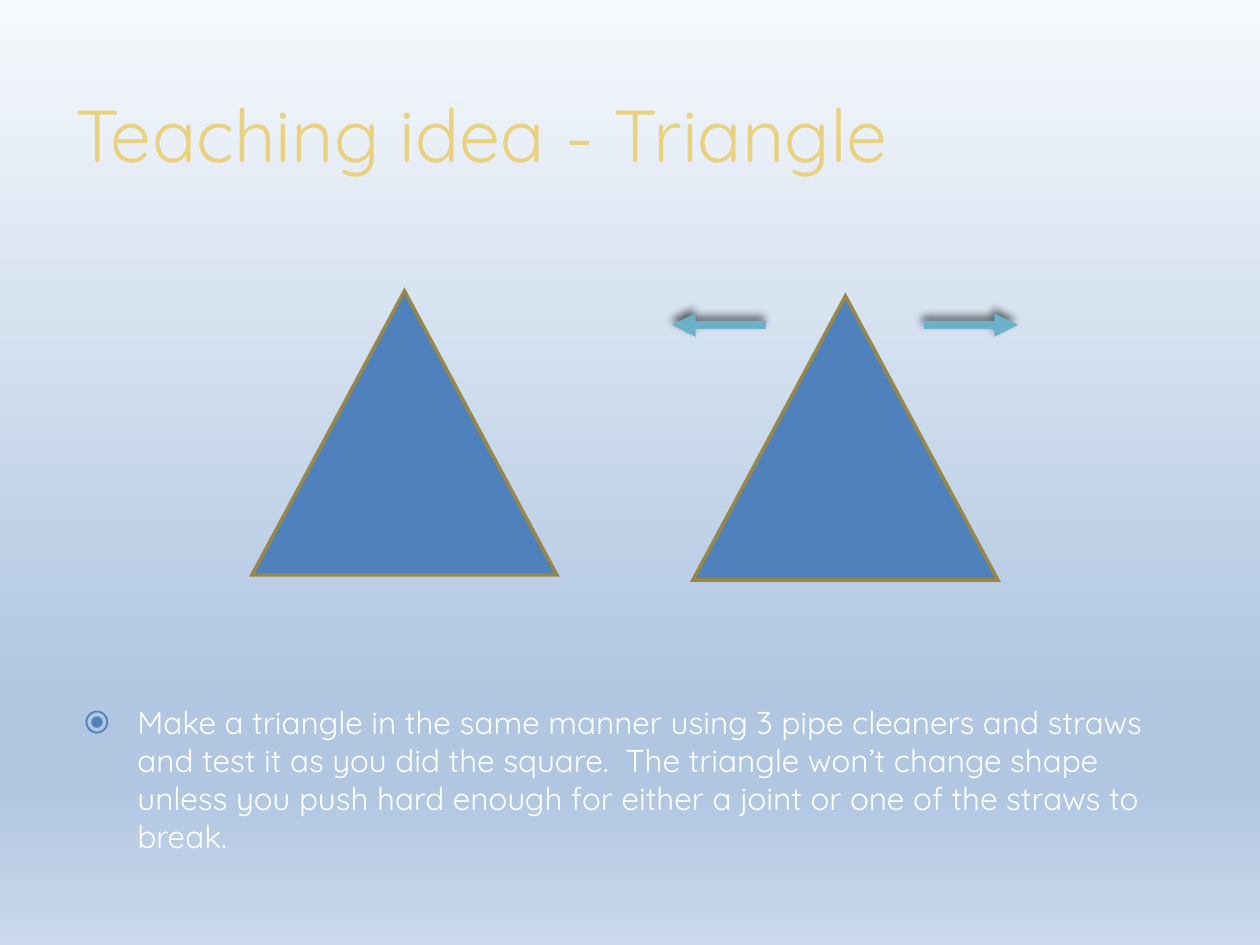
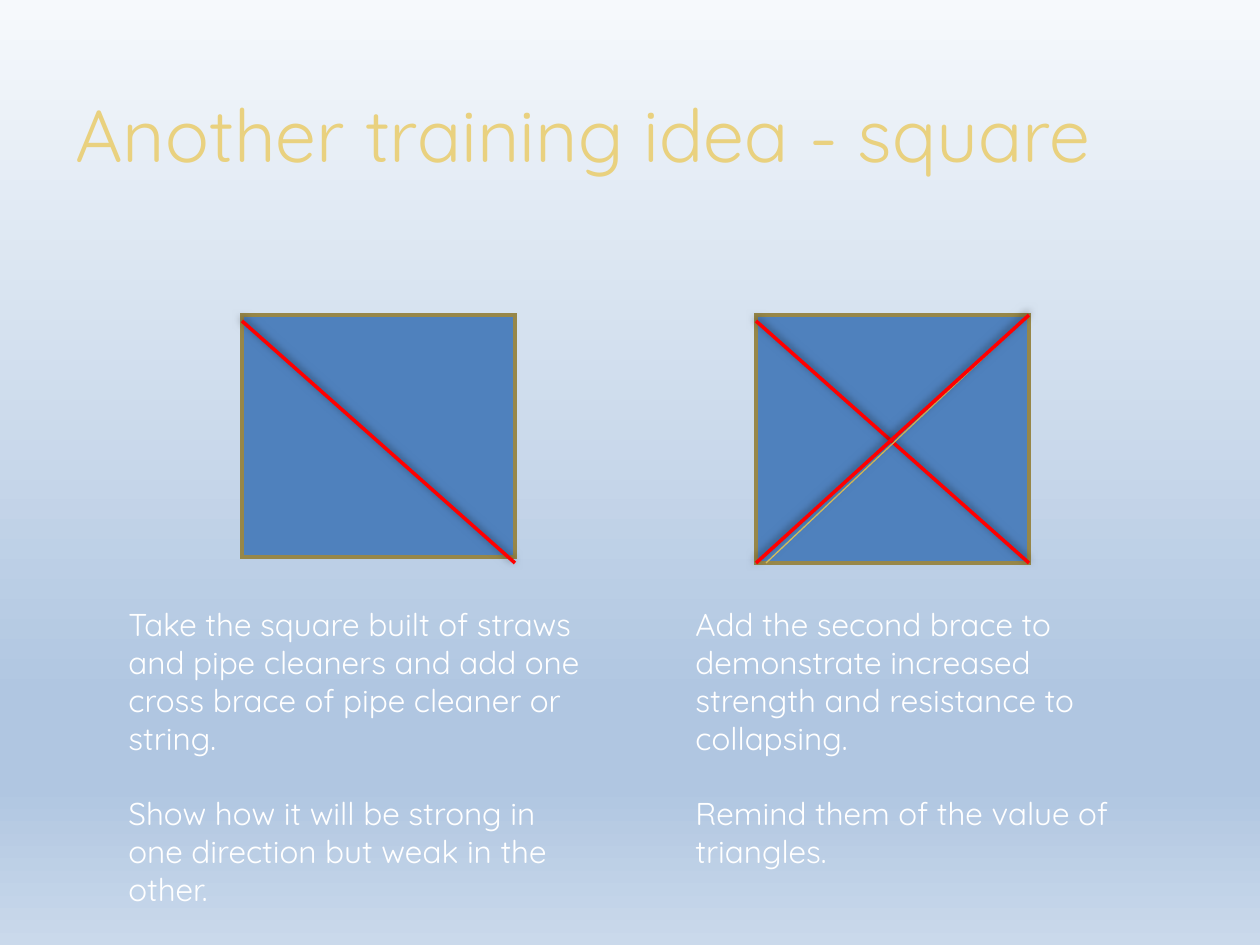
"""Build two slides on teaching the strength of triangles and braced squares."""
from dataclasses import dataclass
from typing import Optional

import pptx
import pptx.dml.color
import pptx.enum.shapes
import pptx.enum.text
import pptx.oxml.ns
import pptx.presentation
import pptx.slide
import pptx.text.text
import pptx.util
from lxml import etree

EMU_PER_PX = 914400 / 126
FONT = "Quicksand"
GOLD, WHITE, BLUE, OLIVE = "E9D17F", "FFFFFF", "4F81BD", "978749"
TEAL, RED, PALE_GOLD = "6BB1C9", "FF0000", "D8BF5C"
BACKGROUND_STOPS = ((0, "F6F9FC"), (74, "B0C6E1"), (83, "B0C6E1"), (100, "CAD9EB"))
BODY_SIZE = 18
BLANK_LINE = 21.5
TRIANGLE = pptx.enum.shapes.MSO_SHAPE.ISOSCELES_TRIANGLE
RECTANGLE = pptx.enum.shapes.MSO_SHAPE.RECTANGLE


@dataclass(frozen=True)
class Box:
    left: int
    top: int
    width: int
    height: int


@dataclass(frozen=True)
class Shadow:
    opacity: int
    blur: int
    distance: int


@dataclass(frozen=True)
class Stroke:
    color: str
    width: float
    shadow: Optional[Shadow] = None
    arrow: bool = False


@dataclass(frozen=True)
class Line:
    start: tuple[int, int]
    end: tuple[int, int]
    stroke: Stroke


@dataclass(frozen=True)
class TextBlock:
    box: Box
    paragraphs: tuple[str, ...]
    size: int = BODY_SIZE
    color: str = WHITE
    bullet: bool = False
    middle: bool = False


ARROW = Stroke(TEAL, 4.5, Shadow(60, 5, 3), arrow=True)
BRACE = Stroke(RED, 2, Shadow(50, 5, 2))
THIN_BRACE = Stroke(PALE_GOLD, 0.75)
TITLE_BOX = Box(63, 37, 1134, 193)

TRIANGLES = (Box(252, 291, 305, 284), Box(693, 296, 305, 284))
PUSHES = (Line((766, 325), (672, 325), ARROW), Line((924, 325), (1018, 325), ARROW))
TRIANGLE_TEXT = TextBlock(
    Box(63, 697, 1134, 164),
    ("Make a triangle in the same manner using 3 pipe cleaners and straws and test it "
     "as you did the square.  The triangle won’t change shape unless you push hard "
     "enough for either a joint or one of the straws to break.",),
    bullet=True,
)

SQUARES = (Box(242, 315, 273, 242), Box(756, 315, 273, 248))
BRACES = (
    Line((242, 321), (515, 563), BRACE),
    Line((756, 321), (1029, 563), BRACE),
    Line((1029, 315), (766, 563), THIN_BRACE),
    Line((1029, 315), (756, 563), BRACE),
)
SQUARE_TEXTS = (
    TextBlock(
        Box(116, 599, 483, 340),
        ("Take the square built of straws and pipe cleaners and add one cross brace of "
         "pipe cleaner or string.",
         "Show how it will be strong in one direction but weak in the other."),
    ),
    TextBlock(
        Box(683, 599, 462, 280),
        ("Add the second brace to demonstrate increased strength and resistance to "
         "collapsing.",
         "Remind them of the value of triangles."),
    ),
)


def px(value: int) -> int:
    """Turn pixels into EMU."""
    return round(value * EMU_PER_PX)


def rgb(value: str) -> pptx.dml.color.RGBColor:
    """Turn a hex string into a colour."""
    return pptx.dml.color.RGBColor.from_string(value)


def add_xml(parent: etree._Element, tag: str, **attributes: object) -> etree._Element:
    """Append a DrawingML element with the given attributes."""
    texts = {name: str(value) for name, value in attributes.items()}
    return etree.SubElement(parent, pptx.oxml.ns.qn(f"a:{tag}"), texts)


def paint_background(slide: pptx.slide.Slide) -> None:
    """Fill the slide with the shared vertical gradient."""
    fill = slide.background.fill
    fill.gradient()
    fill.gradient_angle = 270
    stops = next(slide.element.iter(pptx.oxml.ns.qn("a:gsLst")))
    for stop in list(stops):
        stops.remove(stop)
    for position, color in BACKGROUND_STOPS:
        add_xml(add_xml(stops, "gs", pos=position * 1000), "srgbClr", val=color)


def add_bullet(paragraph: pptx.text.text._Paragraph) -> None:
    """Give the paragraph a hanging ring bullet."""
    properties = paragraph._p.get_or_add_pPr()
    properties.set("marL", str(px(62)))
    properties.set("indent", str(px(-53)))
    add_xml(add_xml(properties, "buClr"), "srgbClr", val=BLUE)
    add_xml(properties, "buFont", typeface=FONT)
    add_xml(properties, "buChar", char="⦿")


def add_text(slide: pptx.slide.Slide, block: TextBlock) -> None:
    """Draw a text box with a blank line's gap between paragraphs."""
    box = block.box
    shape = slide.shapes.add_textbox(px(box.left), px(box.top), px(box.width), px(box.height))
    frame = shape.text_frame
    frame.word_wrap = True
    if block.middle:
        frame.vertical_anchor = pptx.enum.text.MSO_ANCHOR.MIDDLE
    for index, text in enumerate(block.paragraphs):
        paragraph = frame.add_paragraph() if index else frame.paragraphs[0]
        paragraph.text = text
        if index:
            paragraph.space_before = pptx.util.Pt(BLANK_LINE)
        if block.bullet:
            add_bullet(paragraph)
        paragraph.font.name = FONT
        paragraph.font.size = pptx.util.Pt(block.size)
        paragraph.font.color.rgb = rgb(block.color)


def add_figure(slide: pptx.slide.Slide, kind: pptx.enum.shapes.MSO_SHAPE, box: Box) -> None:
    """Draw a blue figure with a sharp-cornered olive outline."""
    shape = slide.shapes.add_shape(
        kind, px(box.left), px(box.top), px(box.width), px(box.height))
    shape.shadow.inherit = False
    shape.fill.solid()
    shape.fill.fore_color.rgb = rgb(BLUE)
    shape.line.color.rgb = rgb(OLIVE)
    shape.line.width = pptx.util.Pt(2)
    add_xml(shape.line._get_or_add_ln(), "miter", lim=800000)


def add_line(slide: pptx.slide.Slide, line: Line) -> None:
    """Draw a straight line with its arrowhead and shadow."""
    stroke = line.stroke
    connector = slide.shapes.add_connector(
        pptx.enum.shapes.MSO_CONNECTOR.STRAIGHT,
        *(px(value) for value in line.start + line.end))
    connector.line.color.rgb = rgb(stroke.color)
    connector.line.width = pptx.util.Pt(stroke.width)
    if stroke.arrow:
        add_xml(connector.line._get_or_add_ln(), "tailEnd", type="triangle")
    effects = add_xml(connector._element.spPr, "effectLst")
    if stroke.shadow:
        shadow = add_xml(
            effects, "outerShdw",
            blurRad=pptx.util.Pt(stroke.shadow.blur),
            dist=pptx.util.Pt(stroke.shadow.distance),
            dir=245 * 60000, rotWithShape=0)
        color = add_xml(shadow, "srgbClr", val="000000")
        add_xml(color, "alpha", val=stroke.shadow.opacity * 1000)


def add_slide(presentation: pptx.presentation.Presentation, title: str) -> pptx.slide.Slide:
    """Add a blank slide with the shared background and title."""
    slide = presentation.slides.add_slide(presentation.slide_layouts[6])
    paint_background(slide)
    add_text(slide, TextBlock(TITLE_BOX, (title,), 42, GOLD, middle=True))
    return slide


def build_triangle_slide(presentation: pptx.presentation.Presentation) -> None:
    """Show that a triangle holds its shape when pushed."""
    slide = add_slide(presentation, "Teaching idea - Triangle")
    add_text(slide, TRIANGLE_TEXT)
    for triangle in TRIANGLES:
        add_figure(slide, TRIANGLE, triangle)
    for push in PUSHES:
        add_line(slide, push)


def build_square_slide(presentation: pptx.presentation.Presentation) -> None:
    """Show squares with one and two braces."""
    slide = add_slide(presentation, "Another training idea - square")
    for square in SQUARES:
        add_figure(slide, RECTANGLE, square)
    for brace in BRACES:
        add_line(slide, brace)
    for block in SQUARE_TEXTS:
        add_text(slide, block)


def main() -> None:
    """Build and save the presentation."""
    presentation = pptx.Presentation()
    presentation.slide_width = px(1260)
    presentation.slide_height = px(945)
    build_triangle_slide(presentation)
    build_square_slide(presentation)
    presentation.save("out.pptx")


if __name__ == "__main__":
    main()
